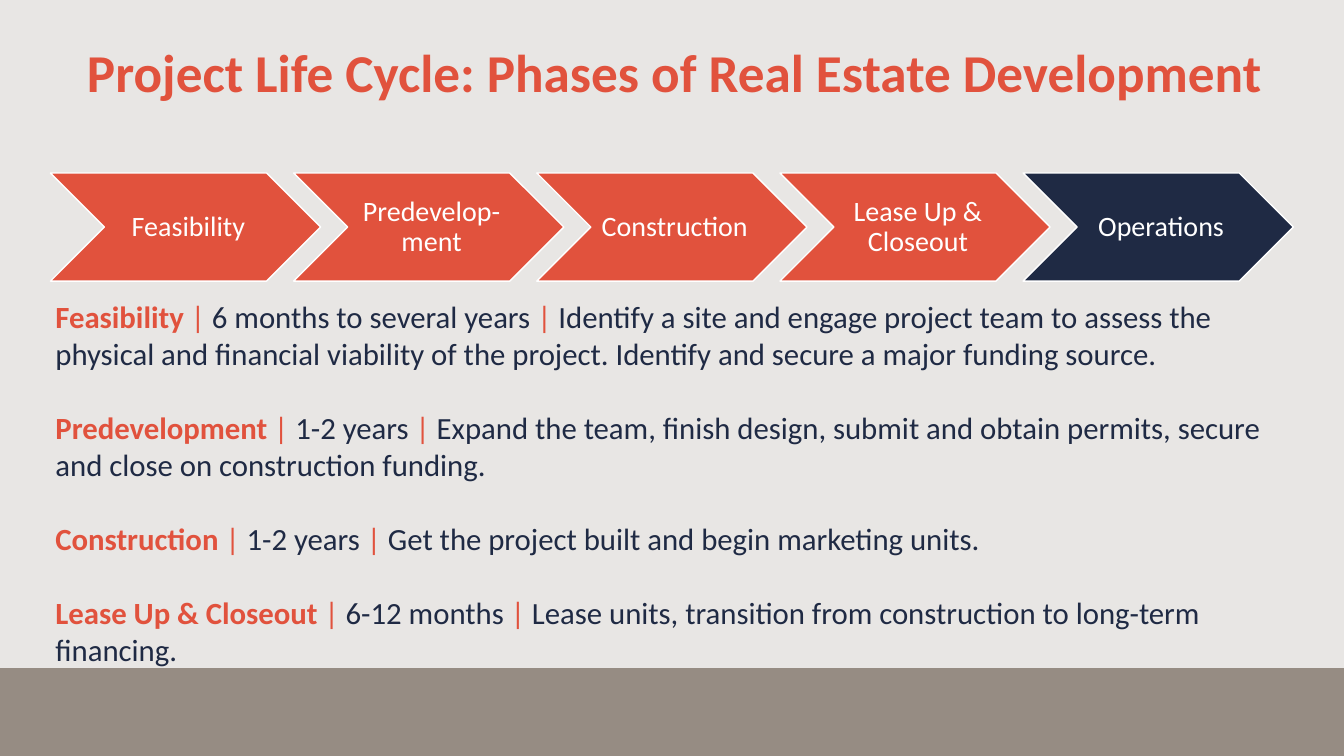
from dataclasses import dataclass

from pptx import Presentation
from pptx.dml.color import RGBColor
from pptx.enum.shapes import MSO_SHAPE
from pptx.enum.text import MSO_ANCHOR, PP_ALIGN
from pptx.util import Pt


@dataclass(frozen=True)
class Theme:
    font: str = "Calibri"
    paper: str = "E8E6E4"
    band: str = "968C83"
    coral: str = "E1523D"
    navy: str = "1F2A44"
    white: str = "FFFFFF"
    title: int = 38
    body: int = 22
    label: int = 20


def tint(code):
    return RGBColor.from_string(code)


def write(para, text, *, font, size, color, bold=False):
    run = para.add_run()
    run.text = text
    run.font.name = font
    run.font.size = Pt(size)
    run.font.bold = bold
    run.font.color.rgb = tint(color)


class Deck:
    def __init__(self, theme):
        self.theme = theme
        self.show = Presentation()
        self.show.slide_width = Pt(960)
        self.show.slide_height = Pt(540)
        self.slide = self.show.slides.add_slide(self.show.slide_layouts[6])
        fill = self.slide.background.fill
        fill.solid()
        fill.fore_color.rgb = tint(theme.paper)

    def shape(self, kind, area, color, edge=None):
        form = self.slide.shapes.add_shape(kind, *map(Pt, area))
        form.shadow.inherit = False
        form.fill.solid()
        form.fill.fore_color.rgb = tint(color)
        if edge:
            form.line.color.rgb = tint(edge)
            form.line.width = Pt(1)
        else:
            form.line.fill.background()
        return form

    def frame(self, form, pads, anchor):
        frame = form.text_frame
        frame.word_wrap = True
        frame.vertical_anchor = anchor
        (frame.margin_left, frame.margin_top,
         frame.margin_right, frame.margin_bottom) = map(Pt, pads)
        return frame

    def center(self, form, pads, text, size, color, bold=False):
        para = self.frame(form, pads, MSO_ANCHOR.MIDDLE).paragraphs[0]
        para.alignment = PP_ALIGN.CENTER
        para.line_spacing = 0.9
        write(para, text, font=self.theme.font, size=size, color=color, bold=bold)

    def title(self, text, area):
        box = self.slide.shapes.add_textbox(*map(Pt, area))
        self.center(box, (7.2, 3.6, 7.2, 3.6), text,
                    self.theme.title, self.theme.coral, True)

    def phase(self, text, area, color):
        form = self.shape(MSO_SHAPE.CHEVRON, area, color, self.theme.white)
        self.center(form, (6.3, 2.1, 2.1, 2.1), text,
                    self.theme.label, self.theme.white)

    def notes(self, rows, area, pad, gap):
        theme = self.theme
        box = self.slide.shapes.add_textbox(*map(Pt, area))
        frame = self.frame(box, [pad] * 4, MSO_ANCHOR.TOP)
        for i, (name, span, text) in enumerate(rows):
            para = frame.add_paragraph() if i else frame.paragraphs[0]
            if i:
                para.space_before = Pt(gap)
            parts = [(name, theme.coral, True), (" | ", theme.coral, False),
                     (span, theme.navy, False), (" | ", theme.coral, False),
                     (text, theme.navy, False)]
            for part, color, bold in parts:
                write(para, part, font=theme.font, size=theme.body,
                      color=color, bold=bold)


PHASES = ["Feasibility", "Predevelop-ment", "Construction",
          "Lease Up & Closeout", "Operations"]
ROWS = [
    ("Feasibility", "6 months to several years",
     "Identify a site and engage project team to assess the physical and "
     "financial viability of the project. Identify and secure a major "
     "funding source."),
    ("Predevelopment", "1-2 years",
     "Expand the team, finish design, submit and obtain permits, secure and "
     "close on construction funding."),
    ("Construction", "1-2 years",
     "Get the project built and begin marketing units."),
    ("Lease Up & Closeout", "6-12 months",
     "Lease units, transition from construction to long-term financing."),
]


def main():
    theme = Theme()
    deck = Deck(theme)
    deck.shape(MSO_SHAPE.RECTANGLE, (0, 477.2, 960, 62.8), theme.band)
    deck.title("Project Life Cycle: Phases of Real Estate Development",
               (24, 26.6, 916, 54))
    for i, name in enumerate(PHASES):
        color = theme.navy if name == "Operations" else theme.coral
        deck.phase(name, (36 + 173.7 * i, 123.6, 193, 77.2), color)
    deck.notes(ROWS, (18, 190.8, 928, 310.3), 21.6, 26.5)
    deck.show.save("out.pptx")


if __name__ == "__main__":
    main()
